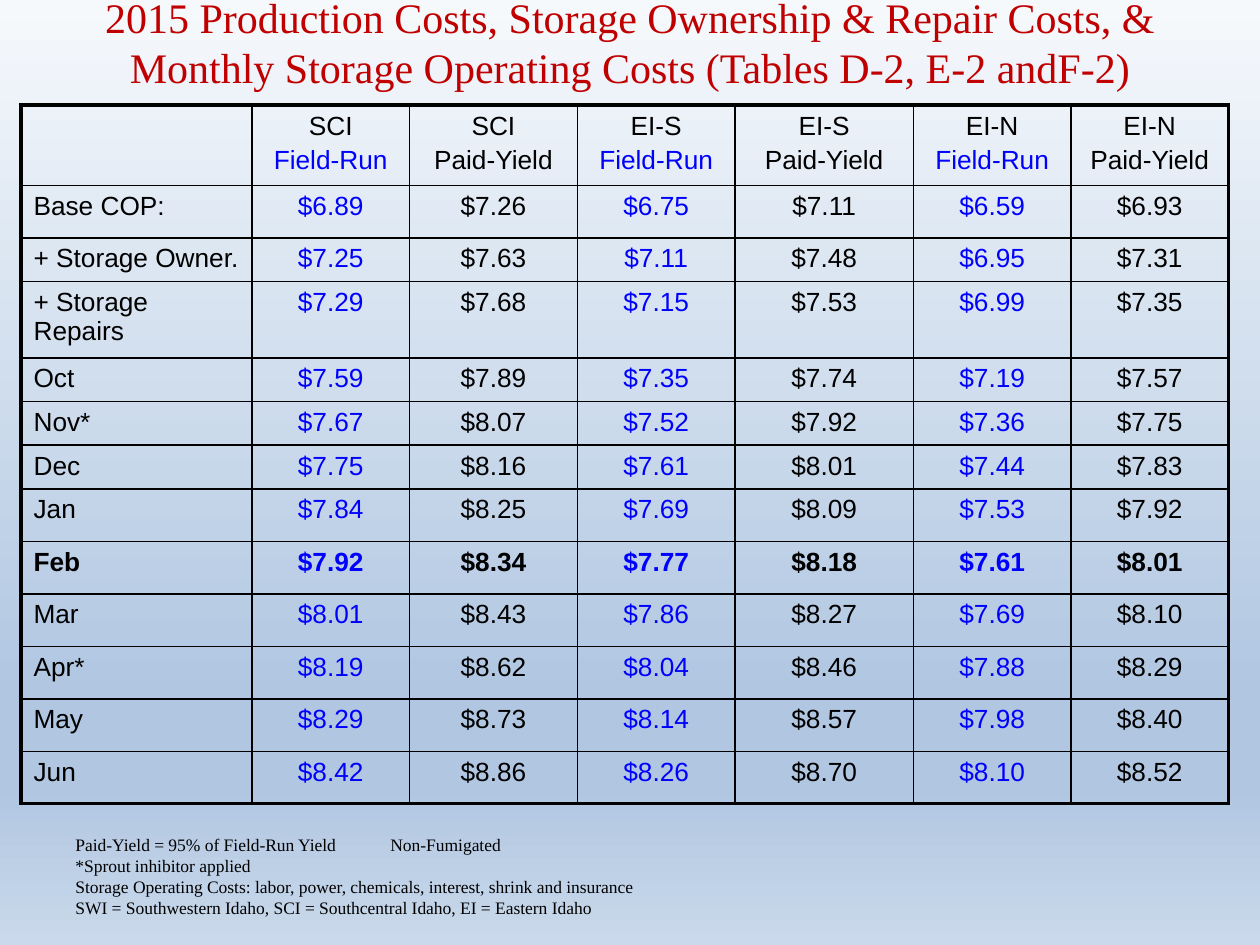
"""Build the slide of 2015 potato production and storage costs."""
from dataclasses import dataclass

from lxml import etree
from pptx import Presentation
from pptx import util as u
from pptx.dml import color
from pptx.enum import text as t
from pptx.oxml import ns


@dataclass(frozen=True)
class Theme:
    """Colours, fonts and type sizes of the slide."""
    title: str = "C00000"
    body: str = "000000"
    field_run: str = "0000FF"
    serif: str = "Times New Roman"
    sans: str = "Arial"
    title_size: float = 24
    table_size: float = 15
    note_size: float = 10
    outer_line: float = 2.25
    inner_line: float = 1
    gradient: tuple = ((0, "F6F9FC"), (74, "B0C6E1"), (83, "B0C6E1"), (100, "CAD9EB"))


THEME = Theme()
TITLE = ("2015 Production Costs, Storage Ownership & Repair Costs, & "
         "Monthly Storage Operating Costs (Tables D-2, E-2 andF-2)")
REGIONS = ("SCI", "EI-S", "EI-N")
YIELDS = ("Field-Run", "Paid-Yield")
COSTS = (
    ("Base COP:", 6.89, 7.26, 6.75, 7.11, 6.59, 6.93),
    ("+ Storage Owner.", 7.25, 7.63, 7.11, 7.48, 6.95, 7.31),
    ("+ Storage Repairs", 7.29, 7.68, 7.15, 7.53, 6.99, 7.35),
    ("Oct", 7.59, 7.89, 7.35, 7.74, 7.19, 7.57),
    ("Nov*", 7.67, 8.07, 7.52, 7.92, 7.36, 7.75),
    ("Dec", 7.75, 8.16, 7.61, 8.01, 7.44, 7.83),
    ("Jan", 7.84, 8.25, 7.69, 8.09, 7.53, 7.92),
    ("Feb", 7.92, 8.34, 7.77, 8.18, 7.61, 8.01),
    ("Mar", 8.01, 8.43, 7.86, 8.27, 7.69, 8.10),
    ("Apr*", 8.19, 8.62, 8.04, 8.46, 7.88, 8.29),
    ("May", 8.29, 8.73, 8.14, 8.57, 7.98, 8.40),
    ("Jun", 8.42, 8.86, 8.26, 8.70, 8.10, 8.52),
)
HIGHLIGHT = "Feb"
COLUMN_WIDTHS = (132, 90, 96, 90, 102, 90, 90)
ROW_HEIGHTS = (46, 30, 25, 43.5, 25, 25, 25) + (30,) * 6
NOTES = (
    "Paid-Yield = 95% of Field-Run Yield\tNon-Fumigated",
    "*Sprout inhibitor applied",
    "Storage Operating Costs: labor, power, chemicals, interest, shrink and insurance",
    "SWI = Southwestern Idaho, SCI = Southcentral Idaho, EI = Eastern Idaho",
)


def write_text(frame, lines, *, size, font, ink=(THEME.body,), bold=False,
               align=t.PP_ALIGN.LEFT, before=0):
    """Write one paragraph per line, the last ink serving all further lines."""
    for index, line in enumerate(lines):
        paragraph = frame.paragraphs[0] if index == 0 else frame.add_paragraph()
        paragraph.alignment = align
        paragraph.space_before = u.Pt(before)
        run = paragraph.add_run()
        run.text = line
        run.font.size = u.Pt(size)
        run.font.name = font
        run.font.bold = bold
        run.font.color.rgb = color.RGBColor.from_string(ink[min(index, len(ink) - 1)])


def paint_background(slide):
    """Fill the background with the downward gradient."""
    fill = slide.background.fill
    fill.gradient()
    fill.gradient_angle = 270
    stops = next(slide.background._cSld.iter(ns.qn("a:gsLst")))
    for stop in list(stops):
        stops.remove(stop)
    for position, value in THEME.gradient:
        stop = etree.SubElement(stops, ns.qn("a:gs"), pos=str(position * 1000))
        etree.SubElement(stop, ns.qn("a:srgbClr"), val=value)


def add_title(slide):
    """Place and format the title placeholder."""
    title = slide.shapes.title
    title.left, title.top, title.width, title.height = map(u.Pt, (36, 0, 648, 48))
    title.text_frame.vertical_anchor = t.MSO_ANCHOR.MIDDLE
    write_text(title.text_frame, [TITLE], size=THEME.title_size, font=THEME.serif,
               ink=(THEME.title,), align=t.PP_ALIGN.CENTER)


def set_borders(cell, widths):
    """Draw the cell's left, right, top and bottom lines."""
    properties = cell._tc.get_or_add_tcPr()
    for index, (side, width) in enumerate(zip("LRTB", widths)):
        line = etree.Element(ns.qn(f"a:ln{side}"), w=str(u.Pt(width)))
        fill = etree.SubElement(line, ns.qn("a:solidFill"))
        etree.SubElement(fill, ns.qn("a:srgbClr"), val=THEME.body)
        properties.insert(index, line)


def cell_lines(row, column):
    """Return the lines of text for one table cell."""
    if row and column:
        return [f"${COSTS[row - 1][column]:.2f}"]
    if row:
        return [COSTS[row - 1][0]]
    if column:
        region, kind = divmod(column - 1, len(YIELDS))
        return [REGIONS[region], YIELDS[kind]]
    return []


def add_cost_table(slide):
    """Add the cost table with a heavy frame and blue field-run columns."""
    rows, columns = len(ROW_HEIGHTS), len(COLUMN_WIDTHS)
    table = slide.shapes.add_table(rows, columns, u.Pt(12), u.Pt(60),
                                   u.Pt(sum(COLUMN_WIDTHS)), u.Pt(sum(ROW_HEIGHTS))).table
    table.first_row = table.horz_banding = False
    for column, width in zip(table.columns, COLUMN_WIDTHS):
        column.width = u.Pt(width)
    for r, height in enumerate(ROW_HEIGHTS):
        table.rows[r].height = u.Pt(height)
        for c in range(columns):
            cell = table.cell(r, c)
            cell.fill.background()
            edges = (c == 0, c == columns - 1, r == 0, r == rows - 1)
            set_borders(cell, [THEME.outer_line if edge else THEME.inner_line for edge in edges])
            value_ink = THEME.field_run if c % 2 else THEME.body
            write_text(cell.text_frame, cell_lines(r, c), size=THEME.table_size, font=THEME.sans,
                       ink=(value_ink,) if r else (THEME.body, value_ink),
                       bold=r > 0 and COSTS[r - 1][0] == HIGHLIGHT,
                       align=t.PP_ALIGN.CENTER if c else t.PP_ALIGN.LEFT, before=3)


def add_notes(slide):
    """Add the explanatory lines under the table."""
    frame = slide.shapes.add_textbox(u.Pt(36), u.Pt(473), u.Pt(414), u.Pt(55.5)).text_frame
    frame.word_wrap = True
    frame.auto_size = t.MSO_AUTO_SIZE.SHAPE_TO_FIT_TEXT
    write_text(frame, NOTES, size=THEME.note_size, font=THEME.serif)


def main():
    """Build and save the presentation."""
    presentation = Presentation()
    presentation.slide_width, presentation.slide_height = u.Pt(720), u.Pt(540)
    slide = presentation.slides.add_slide(presentation.slide_layouts[5])
    paint_background(slide)
    add_title(slide)
    add_cost_table(slide)
    add_notes(slide)
    presentation.save("out.pptx")


if __name__ == "__main__":
    main()
